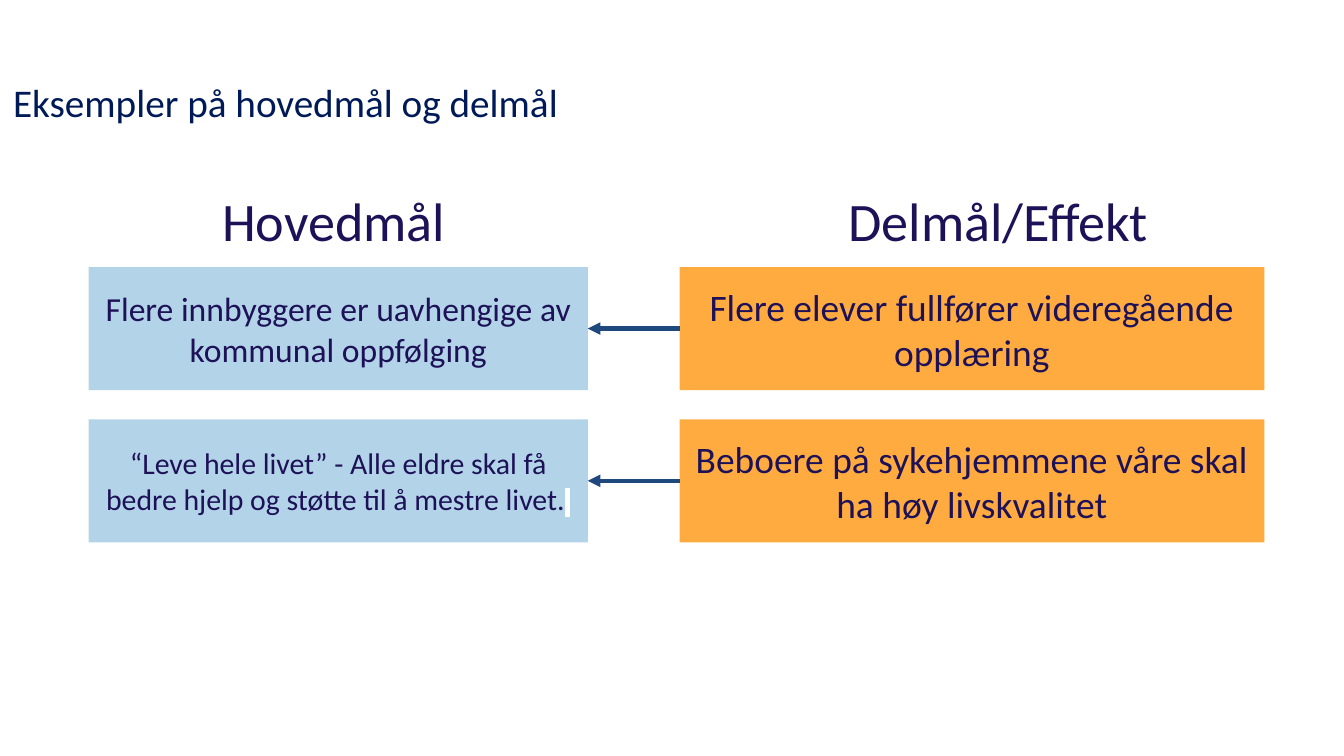
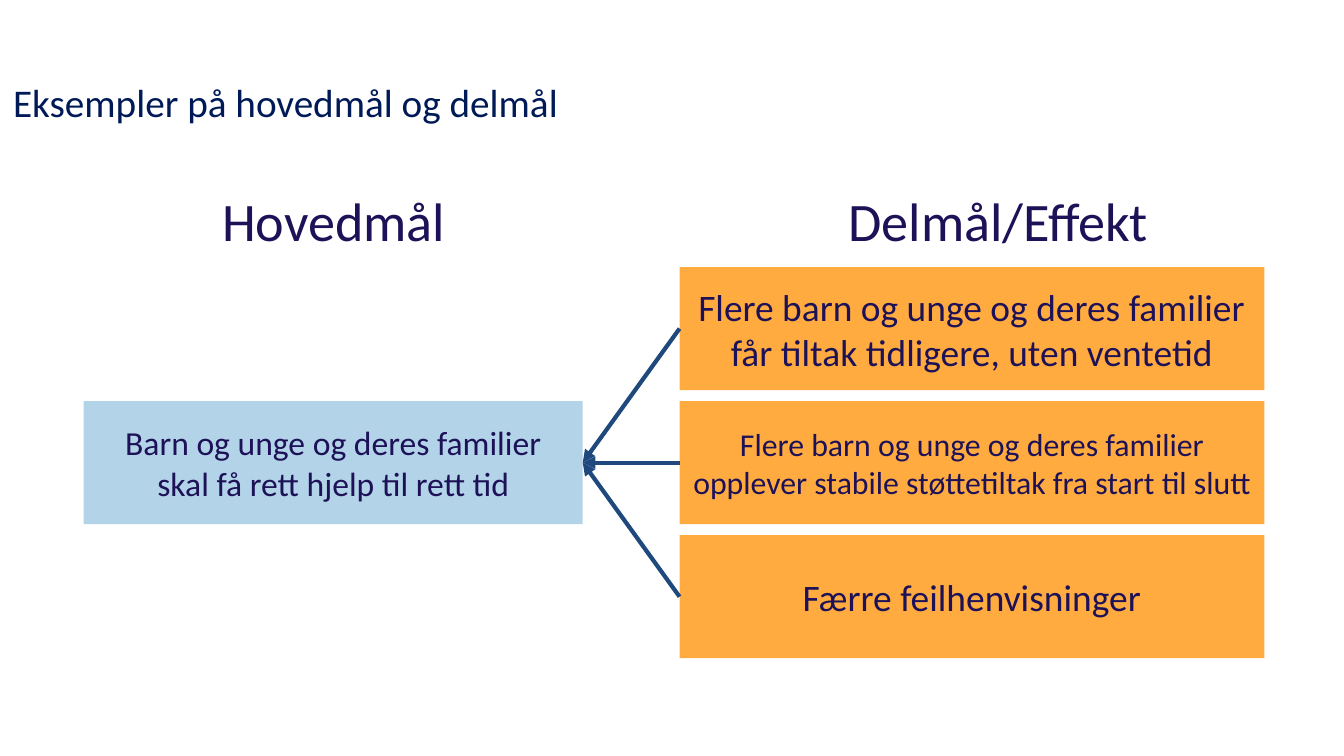
"""Build two slides that link main goals to their sub-goals."""
from lxml import etree
from pptx import Presentation
from pptx.dml.color import RGBColor
from pptx.enum.shapes import MSO_CONNECTOR, MSO_SHAPE
from pptx.enum.text import MSO_ANCHOR, PP_ALIGN
from pptx.oxml.ns import qn
from pptx.util import Inches, Pt

RECT = MSO_SHAPE.RECTANGLE
STRAIGHT = MSO_CONNECTOR.STRAIGHT
TOP, MIDDLE = MSO_ANCHOR.TOP, MSO_ANCHOR.MIDDLE
LEFT, CENTER = PP_ALIGN.LEFT, PP_ALIGN.CENTER

FONT = "Calibri"
NAVY, INDIGO, BLUE = "001A58", "1D1157", "1F497D"
PALE_BLUE, ORANGE, WHITE = "B3D4E8", "FFAB40", "FFFFFF"

MARGIN = 0.13
FIRST_TOP, BOX_HEIGHT = 2.65, 1.22
GOAL_WIDTH = 4.95
EFFECT_LEFT, EFFECT_WIDTH = 6.74, 5.8
LEFT_SITE, RIGHT_SITE = 1, 3


def rgb(value):
    """Turn a hex string into a colour."""
    return RGBColor.from_string(value)


def write(sp, text, size, color=INDIGO, align=CENTER, anchor=TOP):
    """Put one formatted paragraph into a shape."""
    tf = sp.text_frame
    tf.word_wrap = True
    tf.vertical_anchor = anchor
    tf.margin_left = tf.margin_right = Inches(MARGIN)
    tf.margin_top = tf.margin_bottom = Inches(MARGIN)
    tf.text = text
    p = tf.paragraphs[0]
    p.alignment = align
    font = p.runs[0].font
    font.name = FONT
    font.size = Pt(size)
    font.color.rgb = rgb(color)


def add_text(s, x, y, w, h, text, size, color=INDIGO, align=CENTER):
    """Add a text box."""
    sp = s.shapes.add_textbox(Inches(x), Inches(y), Inches(w), Inches(h))
    write(sp, text, size, color, align)


def add_box(s, x, y, w, fill, text, size):
    """Add a filled box with centred text."""
    sp = s.shapes.add_shape(RECT, Inches(x), Inches(y), Inches(w), Inches(BOX_HEIGHT))
    sp.shadow.inherit = False
    sp.fill.solid()
    sp.fill.fore_color.rgb = rgb(fill)
    sp.line.fill.background()
    write(sp, text, size, anchor=MIDDLE)
    return sp


def add_goal(s, x, y, text, size=24):
    """Add a main goal box."""
    return add_box(s, x, y, GOAL_WIDTH, PALE_BLUE, text, size)


def add_effect(s, y, text, size=26.7):
    """Add a sub-goal box."""
    return add_box(s, EFFECT_LEFT, y, EFFECT_WIDTH, ORANGE, text, size)


def add_arrow(s, effect, goal):
    """Join a sub-goal to its main goal with an arrow."""
    line = s.shapes.add_connector(STRAIGHT, 0, 0, 0, 0)
    line.begin_connect(effect, LEFT_SITE)
    line.end_connect(goal, RIGHT_SITE)
    line.line.color.rgb = rgb(BLUE)
    line.line.width = Pt(3)
    etree.SubElement(line.line._get_or_add_ln(), qn("a:tailEnd"), type="triangle")
    etree.SubElement(line._element.spPr, qn("a:effectLst"))


def add_highlighted_space(sp):
    """End the text of a shape with a white highlighted space."""
    r = sp.text_frame.paragraphs[0].add_run()
    r.text = " "
    r.font.size = Pt(17.3)
    highlight = etree.SubElement(r.font._element, qn("a:highlight"))
    etree.SubElement(highlight, qn("a:srgbClr"), val=WHITE)
    r.font.name = FONT


def add_slide(prs):
    """Add a slide with the shared title and column headings."""
    s = prs.slides.add_slide(prs.slide_layouts[6])
    add_text(s, 0, 0.65, 12.42, 0.84, "Eksempler på hovedmål og delmål", 28, NAVY, LEFT)
    for x, heading in ((0.33, "Hovedmål"), (6.92, "Delmål/Effekt")):
        add_text(s, x, 1.73, 5.96, 0.92, heading, 38.7)
    return s


def build_pairs(prs):
    """Build the slide with one sub-goal for each main goal."""
    s = add_slide(prs)
    pairs = [
        ("Flere innbyggere er uavhengige av kommunal oppfølging", 24,
         "Flere elever fullfører videregående opplæring"),
        ("“Leve hele livet” - Alle eldre skal få bedre hjelp og støtte til å mestre livet.", 21.3,
         "Beboere på sykehjemmene våre skal ha høy livskvalitet"),
    ]
    for i, (goal_text, size, effect_text) in enumerate(pairs):
        y = FIRST_TOP + i * 1.51
        goal = add_goal(s, 0.88, y, goal_text, size)
        add_arrow(s, add_effect(s, y, effect_text), goal)
    add_highlighted_space(goal)


def build_fan(prs):
    """Build the slide with three sub-goals for one main goal."""
    s = add_slide(prs)
    pitch = 1.33
    goal = add_goal(s, 0.83, FIRST_TOP + pitch,
                    "Barn og unge og deres familier skal få rett hjelp til rett tid")
    effects = [
        ("Flere barn og unge og deres familier får tiltak tidligere, uten ventetid", 26.7),
        ("Flere barn og unge og deres familier opplever stabile støttetiltak fra start til slutt", 22.7),
        ("Færre feilhenvisninger", 26.7),
    ]
    for i, (text, size) in enumerate(effects):
        add_arrow(s, add_effect(s, FIRST_TOP + i * pitch, text, size), goal)


def main():
    """Build and save the presentation."""
    prs = Presentation()
    prs.slide_width, prs.slide_height = Inches(13.33), Inches(7.5)
    build_pairs(prs)
    build_fan(prs)
    prs.save("out.pptx")


if __name__ == "__main__":
    main()
